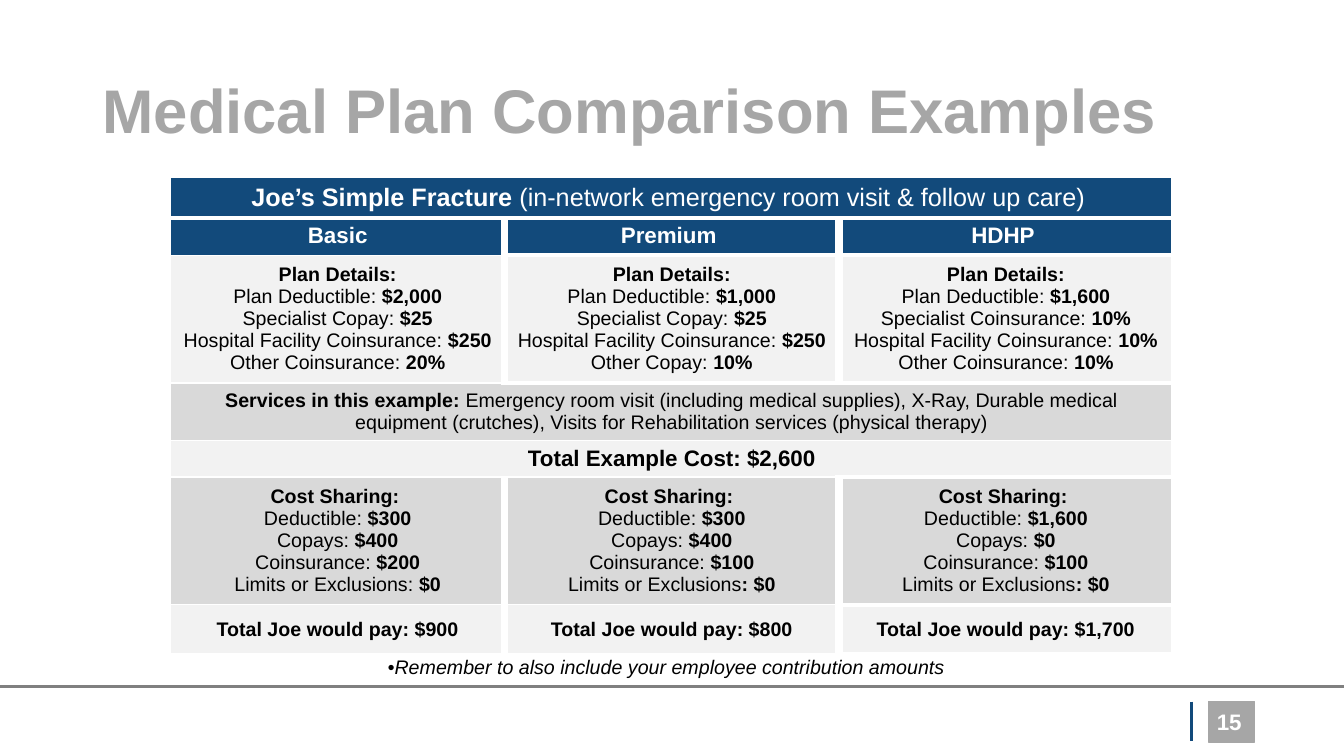
"""Build the medical plan comparison slide."""
from dataclasses import dataclass

from lxml.etree import SubElement
from pptx import Presentation
from pptx.dml.color import RGBColor
from pptx.enum.shapes import MSO_CONNECTOR, MSO_SHAPE
from pptx.enum.text import MSO_ANCHOR, MSO_AUTO_SIZE, PP_ALIGN
from pptx.oxml.ns import qn
from pptx.slide import Slide
from pptx.table import Table, _Cell
from pptx.text.text import TextFrame, _Paragraph
from pptx.util import Cm, Pt

NAVY = RGBColor(0x12, 0x4A, 0x7B)
SILVER = RGBColor(0xA6, 0xA6, 0xA6)
GRAY = RGBColor(0x80, 0x80, 0x80)
PALE = RGBColor(0xF2, 0xF2, 0xF2)
LIGHT = RGBColor(0xD9, 0xD9, 0xD9)
WHITE = RGBColor(0xFF, 0xFF, 0xFF)
BLACK = RGBColor(0x00, 0x00, 0x00)

TABLE_WIDTH = 25.26
ROW_HEIGHTS = (0.81, 0.74, 2.54, 1.27, 0.66, 3.18, 1.24)


@dataclass(frozen=True)
class Span:
    text: str
    bold: bool = True


Line = tuple[Span, ...]


@dataclass(frozen=True)
class Plan:
    name: str
    details: tuple[Line, ...]
    sharing: tuple[Line, ...]
    total: str


@dataclass(frozen=True)
class CellStyle:
    fill: RGBColor
    size: int = 14
    color: RGBColor = BLACK
    anchor: MSO_ANCHOR = MSO_ANCHOR.MIDDLE


@dataclass(frozen=True)
class Borders:
    left: int
    top: int
    right: int
    bottom: int


@dataclass(frozen=True)
class Rule:
    start: tuple[float, float]
    end: tuple[float, float]
    color: RGBColor
    width: float


def heading(text: str) -> Line:
    return (Span(text),)


def entry(label: str, value: str) -> Line:
    return Span(label, False), Span(value)


PLANS = (
    Plan("Basic",
         (heading("Plan Details:"), entry("Plan Deductible: ", "$2,000"),
          entry("Specialist Copay: ", "$25"),
          entry("Hospital Facility Coinsurance: ", "$250"),
          entry("Other Coinsurance: ", "20%")),
         (heading("Cost Sharing: "), entry("Deductible: ", "$300"),
          entry("Copays: ", "$400"), entry("Coinsurance: ", "$200"),
          entry("Limits or Exclusions: ", "$0")),
         "$900"),
    Plan("Premium ",
         (heading("Plan Details:"), entry("Plan Deductible: ", "$1,000"),
          entry("Specialist Copay: ", "$25"),
          entry("Hospital Facility Coinsurance: ", "$250"),
          entry("Other Copay: ", "10%")),
         (heading("Cost Sharing: "), entry("Deductible: ", "$300"),
          entry("Copays: ", "$400"), entry("Coinsurance: ", "$100"),
          entry("Limits or Exclusions", ": $0")),
         "$800"),
    Plan("HDHP ",
         (heading("Plan Details:"), entry("Plan Deductible: ", "$1,600"),
          entry("Specialist Coinsurance: ", "10%"),
          entry("Hospital Facility Coinsurance: ", "10%"),
          entry("Other Coinsurance: ", "10%")),
         (heading("Cost Sharing: "), entry("Deductible: ", "$1,600"),
          entry("Copays: ", "$0"), entry("Coinsurance: ", "$100"),
          entry("Limits or Exclusions", ": $0")),
         "$1,700"),
)

BANNERS = {
    0: ((Span("Joe’s Simple Fracture "),
         Span("(in-network emergency room visit & follow up care) ", False)),
        CellStyle(NAVY, 18, WHITE), Borders(1, 1, 3, 3)),
    3: ((Span("Services in this example: "),
         Span("Emergency room visit (including medical supplies), X-Ray, Durable medical "
              "equipment (crutches), Visits for Rehabilitation services (physical therapy)",
              False)),
        CellStyle(LIGHT), Borders(1, 1, 3, 1)),
    4: (heading("Total Example Cost: $2,600"), CellStyle(PALE, 16), Borders(1, 1, 3, 1)),
}

PLAN_STYLES = {
    1: CellStyle(NAVY, 16, WHITE, MSO_ANCHOR.TOP),
    2: CellStyle(PALE),
    5: CellStyle(LIGHT),
    6: CellStyle(PALE),
}

RULES = (
    Rule((30.02, 17.68), (30.02, 18.67), NAVY, 2),
    Rule((0, 17.3), (33.87, 17.3), GRAY, 2.25),
)


def add_span(para: _Paragraph, text: str, size: int, color: RGBColor,
             bold: bool = True, italic: bool = False) -> None:
    span = para.add_run()
    span.text = text
    span.font.name = "Arial"
    span.font.size = Pt(size)
    span.font.bold = bold
    span.font.italic = italic
    span.font.color.rgb = color


def add_rule(page: Slide, rule: Rule) -> None:
    (x1, y1), (x2, y2) = rule.start, rule.end
    line = page.shapes.add_connector(MSO_CONNECTOR.STRAIGHT, Cm(x1), Cm(y1), Cm(x2), Cm(y2))
    line.line.color.rgb = rule.color
    line.line.width = Pt(rule.width)
    SubElement(line._element.spPr, qn("a:effectLst"))


def add_box(page: Slide, left: float, top: float, width: float, height: float) -> TextFrame:
    frame = page.shapes.add_textbox(Cm(left), Cm(top), Cm(width), Cm(height)).text_frame
    frame.word_wrap = True
    return frame


def set_borders(cell: _Cell, borders: Borders) -> None:
    properties = cell._tc.get_or_add_tcPr()
    sides = (borders.left, borders.top, borders.right, borders.bottom)
    for position, (tag, width) in enumerate(zip(("lnL", "lnR", "lnT", "lnB"),
                                                (sides[0], sides[2], sides[1], sides[3]))):
        edge = SubElement(properties, qn(f"a:{tag}"), w=str(Pt(width)))
        SubElement(SubElement(edge, qn("a:solidFill")), qn("a:srgbClr"), val=str(WHITE))
        properties.insert(position, edge)


def fill_cell(cell: _Cell, lines: tuple[Line, ...], style: CellStyle, borders: Borders) -> None:
    cell.fill.solid()
    cell.fill.fore_color.rgb = style.fill
    cell.vertical_anchor = style.anchor
    set_borders(cell, borders)
    for index, line in enumerate(lines):
        para = cell.text_frame.add_paragraph() if index else cell.text_frame.paragraphs[0]
        para.alignment = PP_ALIGN.CENTER
        for span in line:
            add_span(para, span.text, style.size, style.color, span.bold)


def plan_borders(row: int, column: int) -> Borders:
    if column == 0:
        return Borders(1, 1, 6, 1)
    if column == 2:
        return Borders(6, 3, 3, 3)
    edge = 3 if row < 3 else 1
    return Borders(6, edge, 6, edge)


def fill_table(table: Table) -> None:
    table.first_row = table.horz_banding = False
    for column in table.columns:
        column.width = Cm(TABLE_WIDTH / len(PLANS))
    for row, height in zip(table.rows, ROW_HEIGHTS):
        row.height = Cm(height)
    for row, (line, style, borders) in BANNERS.items():
        table.cell(row, 0).merge(table.cell(row, 2))
        fill_cell(table.cell(row, 0), (line,), style, borders)
    for column, plan in enumerate(PLANS):
        blocks = ((heading(plan.name),), plan.details, plan.sharing,
                  (heading(f"Total Joe would pay: {plan.total}"),))
        for (row, style), lines in zip(PLAN_STYLES.items(), blocks):
            fill_cell(table.cell(row, column), lines, style, plan_borders(row, column))


def main() -> None:
    deck = Presentation()
    deck.slide_width, deck.slide_height = Cm(33.87), Cm(19.05)
    page = deck.slides.add_slide(deck.slide_layouts[5])

    badge = page.shapes.add_shape(MSO_SHAPE.RECTANGLE, Cm(30.45), Cm(17.68), Cm(1.17), Cm(1.02))
    badge.shadow.inherit = False
    badge.fill.solid()
    badge.fill.fore_color.rgb = badge.line.color.rgb = SILVER
    badge.line.width = Pt(1)
    for rule in RULES:
        add_rule(page, rule)

    title = page.shapes.title
    title.left, title.top, title.width, title.height = Cm(2.33), Cm(1.01), Cm(29.21), Cm(3.68)
    title.text_frame.auto_size = MSO_AUTO_SIZE.NONE
    title.text_frame.vertical_anchor = MSO_ANCHOR.MIDDLE
    para = title.text_frame.paragraphs[0]
    para.alignment = PP_ALIGN.LEFT
    para.line_spacing = 0.9
    add_span(para, "Medical Plan Comparison Examples", 44, SILVER)

    number = add_box(page, 23.92, 17.68, 7.62, 1.02)
    number.vertical_anchor = MSO_ANCHOR.MIDDLE
    number.paragraphs[0].alignment = PP_ALIGN.RIGHT
    add_span(number.paragraphs[0], "15", 16, WHITE)

    frame = page.shapes.add_table(len(ROW_HEIGHTS), len(PLANS), Cm(4.3), Cm(4.48),
                                  Cm(TABLE_WIDTH), Cm(sum(ROW_HEIGHTS)))
    fill_table(frame.table)

    reminder = add_box(page, 6.1, 16.38, 21.67, 0.86)
    reminder.margin_right = Cm(0.53)
    reminder.paragraphs[0].alignment = PP_ALIGN.CENTER
    add_span(reminder.paragraphs[0], "•Remember to also include your employee contribution amounts",
             14, BLACK, bold=False, italic=True)
    deck.save("out.pptx")


if __name__ == "__main__":
    main()
